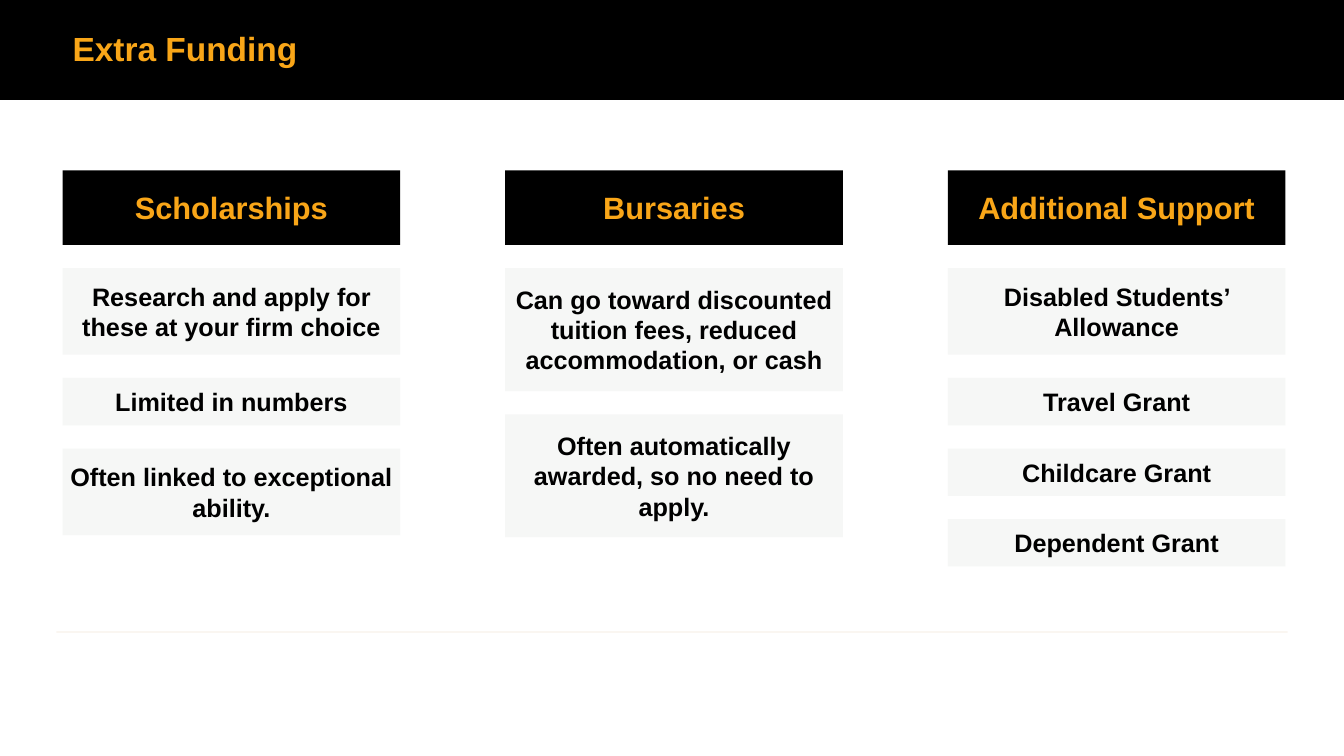
from lxml.etree import SubElement
from pptx import Presentation
from pptx.dml.color import RGBColor
from pptx.enum.shapes import MSO_CONNECTOR, MSO_SHAPE
from pptx.enum.text import MSO_ANCHOR, MSO_AUTO_SIZE, PP_ALIGN
from pptx.oxml.ns import qn
from pptx.util import Inches, Pt

HUES = {"black": "000000", "gold": "F9A618", "pale": "F6F7F6", "rule": "BD8531"}
WIDE, HIGH = 13.33, 7.5
EDGE, TOP = 0.62, 1.69          # corner of the column grid
COL, STEP = 3.35, 4.39          # column width and pitch
HEAD, GAP = 0.74, 0.23          # heading height and gap between boxes
ROWS = {1: 0.47, 2: 0.86, 3: 1.22}  # box height by lines of text

# Heading, then (text, lines) for each box
COLS = [
    ("Scholarships", [
        ("Research and apply for these at your firm choice", 2),
        ("Limited in numbers", 1),
        ("Often linked to exceptional ability.", 2)]),
    ("Bursaries", [
        ("Can go toward discounted tuition fees, reduced accommodation, or cash", 3),
        ("Often automatically awarded, so no need to apply.", 3)]),
    ("Additional Support", [
        ("Disabled Students’ Allowance", 2),
        ("Travel Grant", 1),
        ("Childcare Grant", 1),
        ("Dependent Grant", 1)]),
]


def hue(name):
    return RGBColor.from_string(HUES[name])


def write(shape, text, size, tint, align):
    frame = shape.text_frame
    frame.text = text
    frame.word_wrap = True
    frame.auto_size = MSO_AUTO_SIZE.NONE
    frame.vertical_anchor = MSO_ANCHOR.MIDDLE
    para = frame.paragraphs[0]
    para.alignment = align
    font = para.runs[0].font
    font.name, font.size, font.bold = "Arial", Pt(size), True
    font.color.rgb = hue(tint)


def block(slide, x, y, w, h, fill):
    shape = slide.shapes.add_shape(
        MSO_SHAPE.RECTANGLE, Inches(x), Inches(y), Inches(w), Inches(h))
    shape.shadow.inherit = False
    shape.fill.solid()
    shape.fill.fore_color.rgb = hue(fill)
    shape.line.fill.background()
    return shape


def label(slide, box, fill, text, size, tint):
    shape = block(slide, *box, fill)
    write(shape, text, size, tint, PP_ALIGN.CENTER)
    shape.text_frame.margin_left = shape.text_frame.margin_right = Inches(0.05)


def banner(slide, w, h, text):
    band = block(slide, 0, 0, w, h, "black")
    title = slide.shapes.title
    title.left, title.top = Inches(EDGE), Inches(0.22)
    title.width, title.height = Inches(w - 2 * EDGE), Inches(0.56)
    write(title, text, 23.9, "gold", PP_ALIGN.LEFT)
    title.text_frame.paragraphs[0].line_spacing = 0.9
    title.element.addprevious(band.element)  # band goes behind the title


def rule(slide, x, y, w):
    line = slide.shapes.add_connector(
        MSO_CONNECTOR.STRAIGHT, Inches(x), Inches(y), Inches(x + w), Inches(y))
    line.line.width = Pt(0.5)
    line.line.color.rgb = hue("rule")
    props = line.element.spPr
    tone = props.find(".//" + qn("a:srgbClr"))
    SubElement(tone, qn("a:alpha")).set("val", "18000")
    SubElement(props, qn("a:effectLst"))


def column(slide, x, y, w, head, items):
    label(slide, (x, y, w, HEAD), "black", head, 22, "gold")
    y += HEAD + GAP
    for text, lines in items:
        high = ROWS[lines]
        label(slide, (x, y, w, high), "pale", text, 18, "black")
        y += high + GAP


def main():
    deck = Presentation()
    deck.slide_width, deck.slide_height = Inches(WIDE), Inches(HIGH)
    slide = deck.slides.add_slide(deck.slide_layouts[5])
    rule(slide, 0.56, 6.27, 12.21)
    banner(slide, WIDE, 0.99, "Extra Funding")
    for i, (head, items) in enumerate(COLS):
        column(slide, EDGE + i * STEP, TOP, COL, head, items)
    deck.save("out.pptx")


if __name__ == "__main__":
    main()
